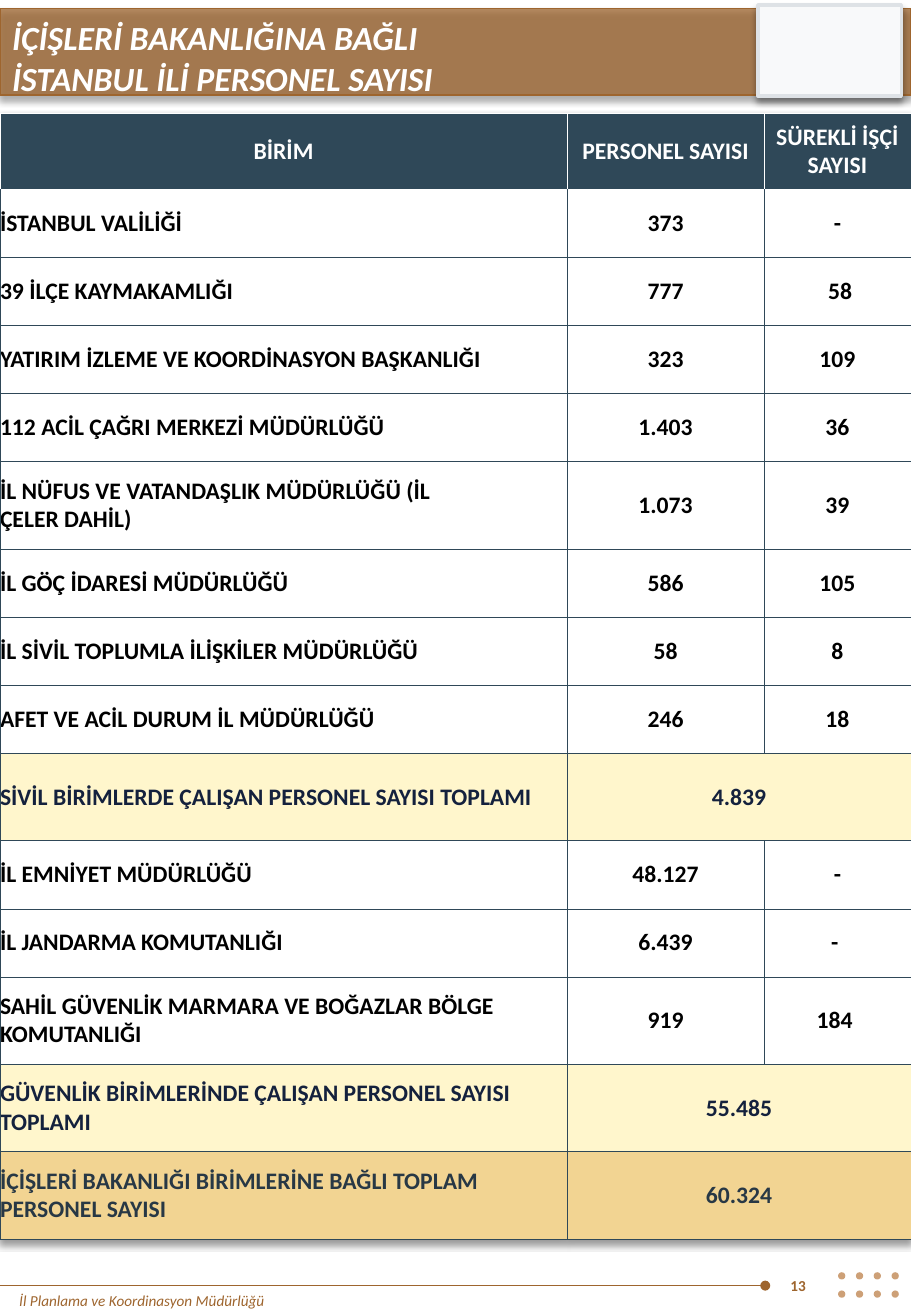
from itertools import product

from lxml.etree import SubElement
from pptx import Presentation
from pptx.dml.color import RGBColor
from pptx.enum.shapes import MSO_CONNECTOR, MSO_SHAPE
from pptx.enum.text import MSO_ANCHOR as ANCHOR, MSO_AUTO_SIZE as AUTO, PP_ALIGN as ALIGN
from pptx.oxml import parse_xml
from pptx.oxml.ns import nsdecls, qn
from pptx.util import Inches, Pt

WIDTH, HEIGHT = 7.5, 10.83
FONT = "Calibri"
WHITE = RGBColor(0xFF, 0xFF, 0xFF)
BLACK = RGBColor(0, 0, 0)
BROWN = RGBColor(0x9E, 0x65, 0x2E)
TAN = RGBColor(0xCD, 0xA0, 0x77)
PANEL = RGBColor(0xF8, 0xF9, 0xFA)
PANEL_EDGE = RGBColor(0xDE, 0xE2, 0xE6)
SLATE = RGBColor(0x2F, 0x48, 0x58)
NAVY = RGBColor(0x14, 0x21, 0x3D)
CHARCOAL = RGBColor(0x28, 0x38, 0x45)
CREAM = RGBColor(0xFF, 0xF6, 0xCC)
GOLD = RGBColor(0xF2, 0xD4, 0x92)

COLUMNS = (4.67, 1.62, 1.21)
HEADER_ROW, ROW, TALL_ROW = 0.63, 0.56, 0.72
# Row kind: fill, text colour
STYLES = {
    "header": (SLATE, WHITE),
    "unit": (WHITE, BLACK),
    "subtotal": (CREAM, NAVY),
    "total": (GOLD, CHARCOAL),
}
ROWS = [
    ("header", HEADER_ROW, "BİRİM", "PERSONEL SAYISI", "SÜREKLİ İŞÇİ SAYISI"),
    ("unit", ROW, "İSTANBUL VALİLİĞİ", "373", "-"),
    ("unit", ROW, "39 İLÇE KAYMAKAMLIĞI", "777", " 58"),
    ("unit", ROW, "YATIRIM İZLEME VE KOORDİNASYON BAŞKANLIĞI", "323", "109"),
    ("unit", ROW, "112 ACİL ÇAĞRI MERKEZİ MÜDÜRLÜĞÜ", "1.403", "36"),
    ("unit", TALL_ROW, "İL NÜFUS VE VATANDAŞLIK MÜDÜRLÜĞÜ (İL\nÇELER DAHİL)", "1.073", "39"),
    ("unit", ROW, "İL GÖÇ İDARESİ MÜDÜRLÜĞÜ", "586", "105"),
    ("unit", ROW, "İL SİVİL TOPLUMLA İLİŞKİLER MÜDÜRLÜĞÜ", "58", "8"),
    ("unit", ROW, "AFET VE ACİL DURUM İL MÜDÜRLÜĞÜ", "246", "18"),
    ("subtotal", TALL_ROW, "SİVİL BİRİMLERDE ÇALIŞAN PERSONEL SAYISI TOPLAMI", "4.839"),
    ("unit", ROW, "İL EMNİYET MÜDÜRLÜĞÜ", "48.127", "-"),
    ("unit", ROW, "İL JANDARMA KOMUTANLIĞI", "6.439", "- "),
    ("unit", TALL_ROW, "SAHİL GÜVENLİK MARMARA VE BOĞAZLAR BÖLGE KOMUTANLIĞI", "919", "184 "),
    ("subtotal", TALL_ROW, "GÜVENLİK BİRİMLERİNDE ÇALIŞAN PERSONEL SAYISI TOPLAMI", "55.485"),
    ("total", TALL_ROW, "İÇİŞLERİ BAKANLIĞI BİRİMLERİNE BAĞLI TOPLAM PERSONEL SAYISI", "60.324"),
]


def box(*lengths):
    return [Inches(n) for n in lengths]


def add_shadow(properties):
    """Append a soft downward shadow to shape or table properties."""
    properties.append(parse_xml(
        f'<a:effectLst {nsdecls("a")}><a:outerShdw blurRad="{Pt(4)}" dist="{Pt(3)}" '
        'dir="5400000" algn="t" rotWithShape="0"><a:srgbClr val="000000">'
        '<a:alpha val="40000"/></a:srgbClr></a:outerShdw></a:effectLst>'))


def format_text(tf, size, color, bold=False, italic=False, align=ALIGN.LEFT):
    for p in tf.paragraphs:
        p.alignment = align
        for r in p.runs:
            r.font.name, r.font.size = FONT, Pt(size)
            r.font.bold, r.font.italic = bold, italic
            r.font.color.rgb = color


def add_text(s, at, text, anchor=ANCHOR.TOP, **style):
    tf = s.shapes.add_textbox(*box(*at)).text_frame
    tf.word_wrap = True
    tf.vertical_anchor = anchor
    tf.text = text
    format_text(tf, 9, BROWN, **style)


def add_panel(s, at, fill, edge, width, alpha=None):
    """Add a shadowed rectangle; alpha is the fill's opacity in percent."""
    sp = s.shapes.add_shape(MSO_SHAPE.RECTANGLE, *box(*at))
    sp.fill.solid()
    sp.fill.fore_color.rgb = fill
    sp.line.color.rgb = edge
    sp.line.width = Pt(width)
    properties = sp.element.spPr
    if alpha:
        color = properties.find(qn("a:solidFill")).find(qn("a:srgbClr"))
        SubElement(color, qn("a:alpha"), val=str(alpha * 1000))
    add_shadow(properties)


def add_title(s):
    title = s.shapes.title
    s.shapes.element.append(title.element)
    title.left, title.top, title.width, title.height = box(0, 0.09, WIDTH, 0.77)
    tf = title.text_frame
    tf.text = "İÇİŞLERİ BAKANLIĞINA BAĞLI\nİSTANBUL İLİ PERSONEL SAYISI"
    tf.auto_size = AUTO.NONE
    tf.vertical_anchor = ANCHOR.TOP
    format_text(tf, 20, WHITE, bold=True, italic=True)


def add_footer(s):
    rule = s.shapes.add_connector(MSO_CONNECTOR.STRAIGHT, *box(6.3, 10.58, 0, 10.58))
    rule.line.color.rgb = BROWN
    rule.line.width = Pt(0.5)
    SubElement(rule.line._get_or_add_ln(), qn("a:headEnd"), type="oval")
    SubElement(rule.element.spPr, qn("a:effectLst"))
    for col, row in product(range(4), range(2)):
        at = box(6.9 + col * 0.44 / 3, 10.47 + row * 0.15, 0.06, 0.06)
        dot = s.shapes.add_shape(MSO_SHAPE.OVAL, *at)
        dot.shadow.inherit = False
        dot.fill.solid()
        dot.fill.fore_color.rgb = TAN
        dot.line.fill.background()
    add_text(s, (0.06, 10.58, 4.69, 0.25), "İl Planlama ve Koordinasyon Müdürlüğü", italic=True)
    add_text(s, (6.41, 10.37, 0.5, 0.42), "13", ANCHOR.MIDDLE, bold=True)


def set_borders(cell, color, top):
    properties = cell._tc.get_or_add_tcPr()
    for i, (side, tint) in enumerate(zip("LRTB", (color, color, top, color))):
        properties.insert(i, parse_xml(
            f'<a:ln{side} {nsdecls("a")} w="{Pt(0.25)}"><a:solidFill>'
            f'<a:srgbClr val="{tint}"/></a:solidFill></a:ln{side}>'))


def format_cell(cell, kind, align):
    fill, color = STYLES[kind]
    cell.fill.solid()
    cell.fill.fore_color.rgb = fill
    cell.vertical_anchor = ANCHOR.MIDDLE
    cell.margin_left = cell.margin_right = cell.margin_top = cell.margin_bottom = 0
    format_text(cell.text_frame, 14, color, bold=True, align=align)


def add_staff_table(s):
    height = sum(row[1] for row in ROWS)
    frame = s.shapes.add_table(len(ROWS), len(COLUMNS), *box(0, 0.93, WIDTH, height))
    table = frame.table
    table.horz_banding = False
    add_shadow(table._tbl.tblPr)
    # Effects come before the style reference in table properties
    table._tbl.tblPr.insert(0, table._tbl.tblPr[-1])
    for column, width in zip(table.columns, COLUMNS):
        column.width = Inches(width)
    for i, (kind, row_height, *texts) in enumerate(ROWS):
        table.rows[i].height = Inches(row_height)
        if len(texts) < len(COLUMNS):
            table.cell(i, 1).merge(table.cell(i, 2))
        for j in range(len(COLUMNS)):
            cell = table.cell(i, j)
            if j < len(texts):
                cell.text_frame.text = texts[j]
            left = j == 0 and kind != "header"
            format_cell(cell, kind, ALIGN.LEFT if left else ALIGN.CENTER)
            set_borders(cell, WHITE if i == 0 else SLATE, WHITE if i < 2 else SLATE)


def main():
    prs = Presentation()
    prs.slide_width, prs.slide_height = box(WIDTH, HEIGHT)
    s = prs.slides.add_slide(prs.slide_layouts[5])
    add_panel(s, (0, 0.07, WIDTH, 0.71), BROWN, BROWN, 1, alpha=75)
    add_panel(s, (6.24, 0.04, 1.18, 0.75), PANEL, PANEL_EDGE, 2)
    add_footer(s)
    add_title(s)
    add_staff_table(s)
    prs.save("out.pptx")


if __name__ == "__main__":
    main()
